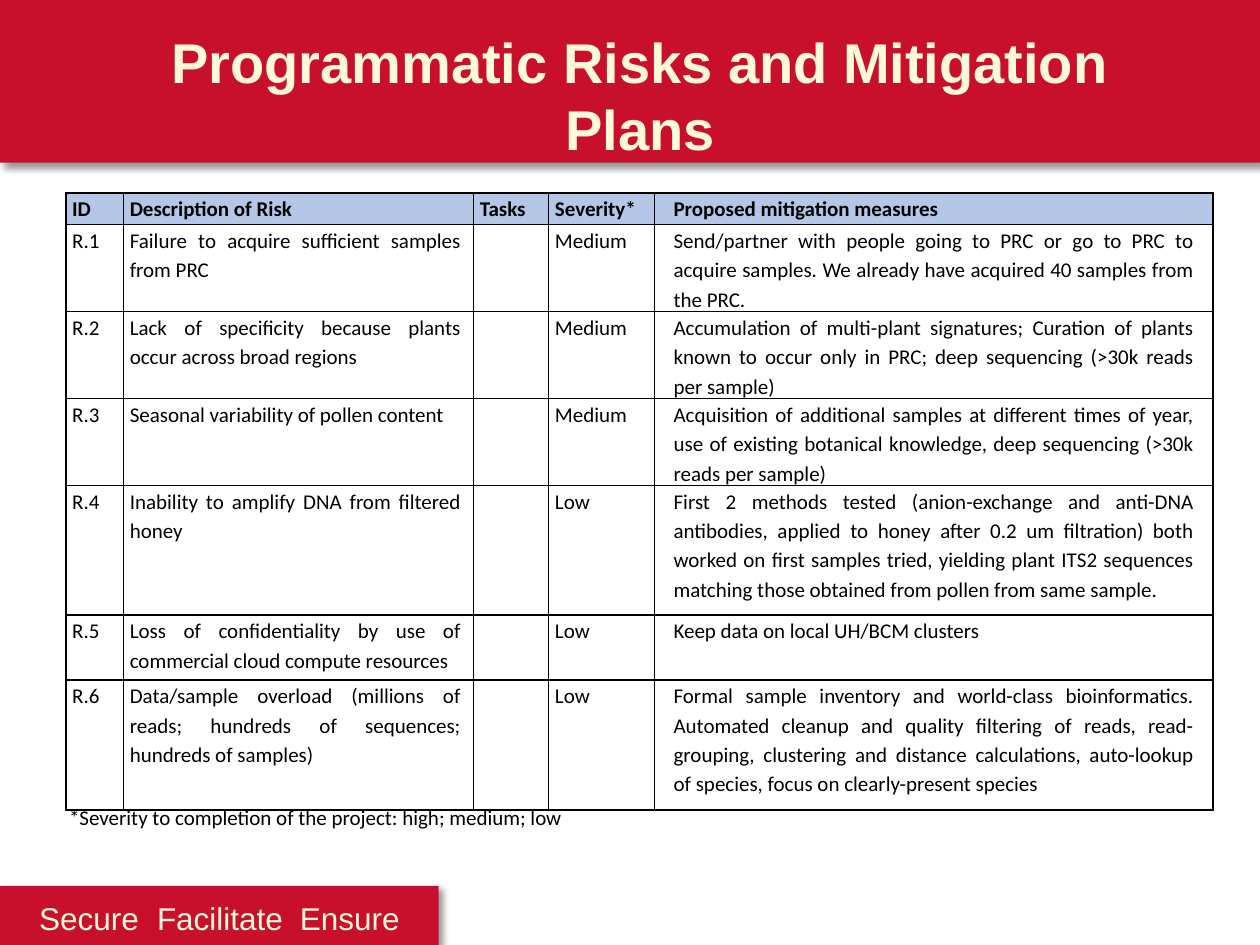
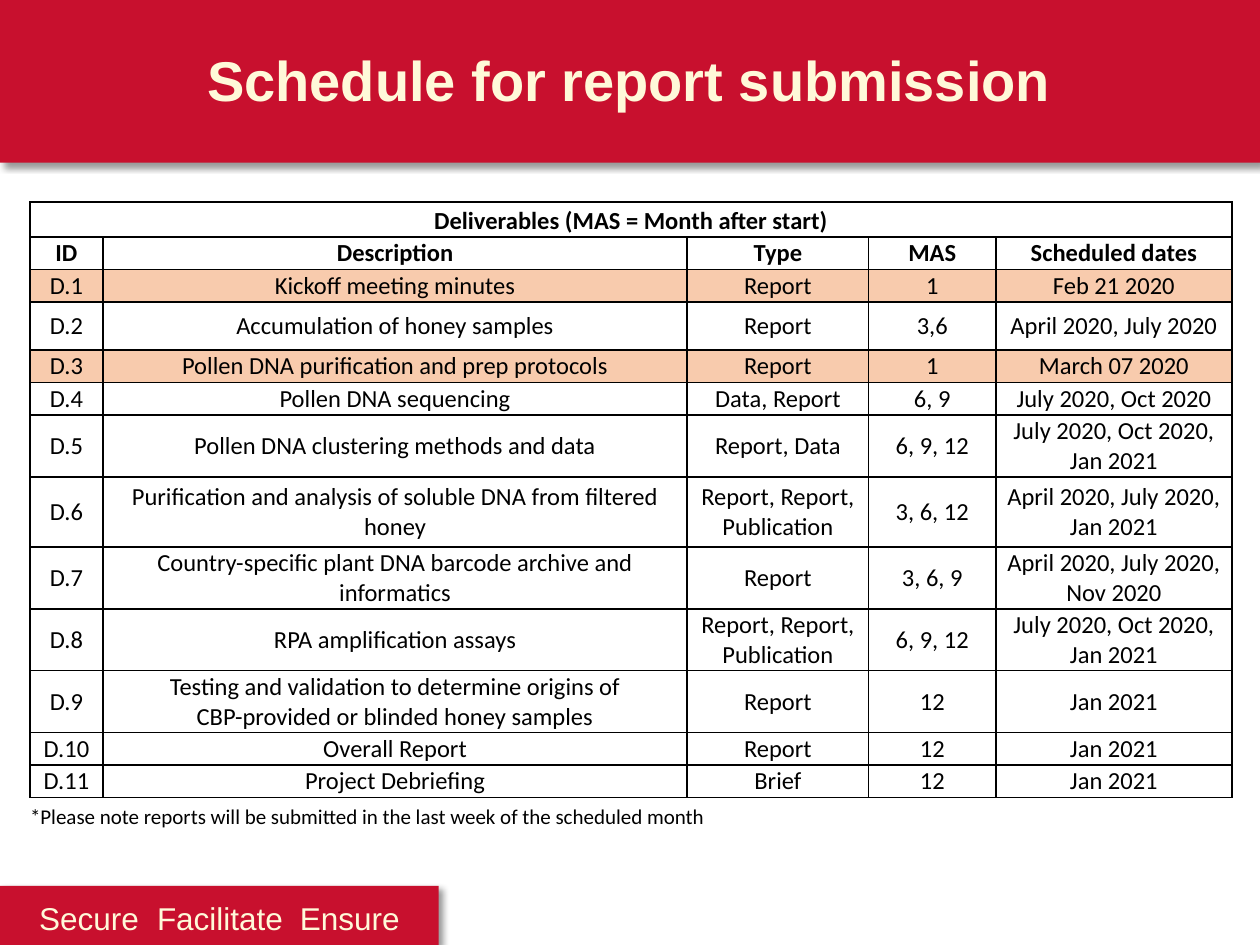
from dataclasses import dataclass, field
from typing import Any, Optional

from lxml import etree
from pptx import Presentation
from pptx import util as u
from pptx.dml import color
from pptx.enum import shapes, text
from pptx.oxml import ns

Pt = u.Pt
ALIGN, ANCHOR = text.PP_ALIGN, text.MSO_ANCHOR


@dataclass(frozen=True)
class Theme:
    red: str = "C8102E"
    cream: str = "FFF9D9"
    black: str = "000000"
    header_blue: str = "B4C7E7"
    done_orange: str = "F8CBAD"
    heading: str = "Arial"
    body: str = "Calibri"
    title_size: float = 32
    motto_size: float = 18
    schedule_size: float = 14
    note_size: float = 12


THEME = Theme()


@dataclass(frozen=True)
class Box:
    left: float
    top: float
    width: float
    height: float

    def lengths(self) -> list[Any]:
        return [Pt(v) for v in (self.left, self.top, self.width, self.height)]


@dataclass(frozen=True)
class Style:
    size: float
    name: str = THEME.body
    rgb: str = THEME.black
    bold: bool = False
    align: Any = ALIGN.LEFT
    spacing: float = 1.0


@dataclass(frozen=True)
class Grid:
    """A table: its place, sizes, cell style and the fills of whole rows."""
    left: float
    top: float
    cols: list[float]
    heights: list[float]
    rows: list[list[str]]
    style: Style
    header_rows: int
    fills: dict[int, str]
    cell_format: dict[str, Any]
    col_formats: dict[int, dict[str, Any]] = field(default_factory=dict)
    caption: Optional[str] = None


TITLE = Style(THEME.title_size, THEME.heading, THEME.cream, True, ALIGN.CENTER)
MOTTO = Style(THEME.motto_size, THEME.heading, THEME.cream, spacing=1.19)
NOTE = Style(THEME.note_size)
RISK = Style(THEME.note_size, align=ALIGN.JUSTIFY, spacing=1.15)
SCHEDULE = Style(THEME.schedule_size, align=ALIGN.CENTER)

TITLE_BAND = Box(0, 0, 720, 92.9)
MOTTO_BAND = Box(0, 506.2, 250.6, 33.8)
MOTTO_WORDS = ["Secure", "Facilitate", "Ensure"]
MOTTO_LEFT = 22.3
MOTTO_TABS = [67.4, 149.1]

RISKS = Grid(
    left=37.6, top=110.3,
    cols=[33, 200, 43, 60.6, 319],
    heights=[18, 49.6, 49.6, 49.6, 74.2, 37, 74.2],
    rows=[
        ["ID", "Description of Risk", "Tasks", "Severity*", "Proposed mitigation measures"],
        ["R.1", "Failure to acquire sufficient samples from PRC", "", "Medium",
         "Send/partner with people going to PRC or go to PRC to acquire samples. "
         "We already have acquired 40 samples from the PRC."],
        ["R.2", "Lack of specificity because plants occur across broad regions", "", "Medium",
         "Accumulation of multi-plant signatures; Curation of plants known to occur only in PRC; "
         "deep sequencing (>30k reads per sample)"],
        ["R.3", "Seasonal variability of pollen content", "", "Medium",
         "Acquisition of additional samples at different times of year, use of existing "
         "botanical knowledge, deep sequencing (>30k reads per sample)"],
        ["R.4", "Inability to amplify DNA from filtered honey", "", "Low",
         "First 2 methods tested (anion-exchange and anti-DNA antibodies, applied to honey after "
         "0.2 um filtration) both worked on first samples tried, yielding plant ITS2 sequences "
         "matching those obtained from pollen from same sample."],
        ["R.5", "Loss of confidentiality by use of commercial cloud compute resources", "", "Low",
         "Keep data on local UH/BCM clusters"],
        ["R.6", "Data/sample overload (millions of reads; hundreds of sequences; hundreds of samples)",
         "", "Low",
         "Formal sample inventory and world-class bioinformatics. Automated cleanup and quality "
         "filtering of reads, read-grouping, clustering and distance calculations, auto-lookup "
         "of species, focus on clearly-present species"],
    ],
    style=RISK, header_rows=1, fills={0: THEME.header_blue},
    cell_format={"margin_left": Pt(3.6), "margin_right": Pt(3.6),
                 "margin_top": 0, "margin_bottom": 0},
    col_formats={1: {"margin_right": Pt(7.2)},
                 4: {"margin_left": Pt(10.8), "margin_right": Pt(10.8)}},
)

ONE_LINE, TWO_LINES = 18.6, 35.4
DELIVERABLES = Grid(
    left=17.1, top=115.4,
    cols=[41.8, 333.8, 103.8, 72.6, 135],
    heights=[20, ONE_LINE, ONE_LINE, 27.4, ONE_LINE, ONE_LINE, TWO_LINES, 40,
             TWO_LINES, TWO_LINES, TWO_LINES, ONE_LINE, ONE_LINE],
    rows=[
        ["ID", "Description", "Type", "MAS", "Scheduled dates"],
        ["D.1", "Kickoff meeting minutes", "Report", "1", "Feb 21 2020"],
        ["D.2", "Accumulation of honey samples", "Report", "3,6", "April 2020, July 2020"],
        ["D.3", "Pollen DNA purification and prep protocols", "Report", "1", "March 07 2020"],
        ["D.4", "Pollen DNA sequencing", "Data, Report", "6, 9", "July 2020, Oct 2020"],
        ["D.5", "Pollen DNA clustering methods and data", "Report, Data", "6, 9, 12",
         "July 2020, Oct 2020, Jan 2021"],
        ["D.6", "Purification and analysis of soluble DNA from filtered honey",
         "Report, Report, Publication", "3, 6, 12", "April 2020, July 2020, Jan 2021"],
        ["D.7", "Country-specific plant DNA barcode archive and informatics", "Report", "3, 6, 9",
         "April 2020, July 2020, Nov 2020"],
        ["D.8", "RPA amplification assays", "Report, Report, Publication", "6, 9, 12",
         "July 2020, Oct 2020, Jan 2021"],
        ["D.9", "Testing and validation to determine origins of\vCBP-provided or blinded honey samples",
         "Report", "12", "Jan 2021"],
        ["D.10", "Overall Report", "Report", "12", "Jan 2021"],
        ["D.11", "Project Debriefing", "Brief", "12", "Jan 2021"],
    ],
    style=SCHEDULE, header_rows=2, fills={2: THEME.done_orange, 4: THEME.done_orange},
    cell_format={"margin_left": Pt(1.4), "margin_right": Pt(1.4), "margin_top": Pt(0.7),
                 "margin_bottom": Pt(0.7), "vertical_anchor": ANCHOR.MIDDLE},
    caption="Deliverables (MAS = Month after start)",
)


def assign(target: Any, values: dict[str, Any]) -> None:
    for name, value in values.items():
        setattr(target, name, value)


def child(parent: Any, tag: str, **attrs: Any) -> Any:
    return etree.SubElement(parent, ns.qn(tag), {k: str(v) for k, v in attrs.items()})


def write(tf: Any, words: str, style: Style, bold: bool = False) -> None:
    p = tf.paragraphs[0]
    p.text = words
    assign(p, {"alignment": style.align, "line_spacing": style.spacing})
    for r in p.runs:
        assign(r.font, {"size": Pt(style.size), "name": style.name, "bold": style.bold or bold})
        r.font.color.rgb = color.RGBColor.from_string(style.rgb)


def add_text(s: Any, box: Box, words: str, style: Style) -> None:
    tf = s.shapes.add_textbox(*box.lengths()).text_frame
    tf.word_wrap = True
    write(tf, words, style)


def add_band(s: Any, box: Box) -> Any:
    """Add a red band with a soft shadow to its lower right."""
    sp = s.shapes.add_shape(shapes.MSO_SHAPE.RECTANGLE, *box.lengths())
    sp.fill.solid()
    sp.fill.fore_color.rgb = color.RGBColor.from_string(THEME.red)
    sp.line.fill.background()
    sp.shadow.inherit = False
    effects = sp.element.spPr.find(ns.qn("a:effectLst"))
    shadow = child(effects, "a:outerShdw", blurRad=Pt(4), dist=Pt(3), dir=45 * 60000,
                   algn="tl", rotWithShape=0)
    child(child(shadow, "a:srgbClr", val=THEME.black), "a:alpha", val=40000)
    return sp


def add_motto(s: Any) -> None:
    tf = add_band(s, MOTTO_BAND).text_frame
    assign(tf, {"margin_left": Pt(MOTTO_LEFT), "margin_right": 0, "word_wrap": True,
                "vertical_anchor": ANCHOR.TOP})
    write(tf, "\t".join(MOTTO_WORDS), MOTTO)
    tabs = child(tf.paragraphs[0]._p.get_or_add_pPr(), "a:tabLst")
    for pos in MOTTO_TABS:
        child(tabs, "a:tab", pos=Pt(pos), algn="l")


def add_borders(cell: Any) -> None:
    tc_pr = cell._tc.get_or_add_tcPr()
    for side in ("a:lnL", "a:lnR", "a:lnT", "a:lnB"):
        fill = child(child(tc_pr, side, w=Pt(1)), "a:solidFill")
        child(fill, "a:srgbClr", val=THEME.black)


def add_grid(s: Any, grid: Grid) -> None:
    rows = grid.rows
    if grid.caption:
        rows = [[grid.caption] + [""] * (len(grid.cols) - 1)] + rows
    box = Box(grid.left, grid.top, sum(grid.cols), sum(grid.heights))
    table = s.shapes.add_table(len(rows), len(grid.cols), *box.lengths()).table
    assign(table, {"first_row": False, "horz_banding": False})
    for col, width in zip(table.columns, grid.cols):
        col.width = Pt(width)
    for row, height in zip(table.rows, grid.heights):
        row.height = Pt(height)
    for i, row in enumerate(rows):
        for j, words in enumerate(row):
            cell = table.cell(i, j)
            assign(cell, grid.cell_format | grid.col_formats.get(j, {}))
            add_borders(cell)
            if i in grid.fills:
                cell.fill.solid()
                cell.fill.fore_color.rgb = color.RGBColor.from_string(grid.fills[i])
            else:
                cell.fill.background()
            write(cell.text_frame, words, grid.style, bold=i < grid.header_rows)
    if grid.caption:
        table.cell(0, 0).merge(table.cell(0, len(grid.cols) - 1))
        table.cell(0, 0).vertical_anchor = ANCHOR.BOTTOM


def add_slide(prs: Any, title: str, title_box: Box, grid: Grid,
              note: str, note_box: Box, note_style: Style) -> None:
    s = prs.slides.add_slide(prs.slide_layouts[6])
    add_band(s, TITLE_BAND)
    add_motto(s)
    add_text(s, title_box, title, TITLE)
    add_grid(s, grid)
    add_text(s, note_box, note, note_style)


def main() -> None:
    prs = Presentation()
    assign(prs, {"slide_width": Pt(720), "slide_height": Pt(540)})
    add_slide(prs, "Programmatic Risks and Mitigation Plans", Box(77.8, 12.2, 576, 85), RISKS,
              "*Severity to completion of the project: high; medium; low",
              Box(32.4, 454.3, 321, 23), RISK)
    add_slide(prs, "Schedule for report submission", Box(50.4, 22.3, 618.5, 46), DELIVERABLES,
              "*Please note reports will be submitted in the last week of the scheduled month",
              Box(10.1, 455.8, 687, 21.6), NOTE)
    prs.save("out.pptx")


if __name__ == "__main__":
    main()
